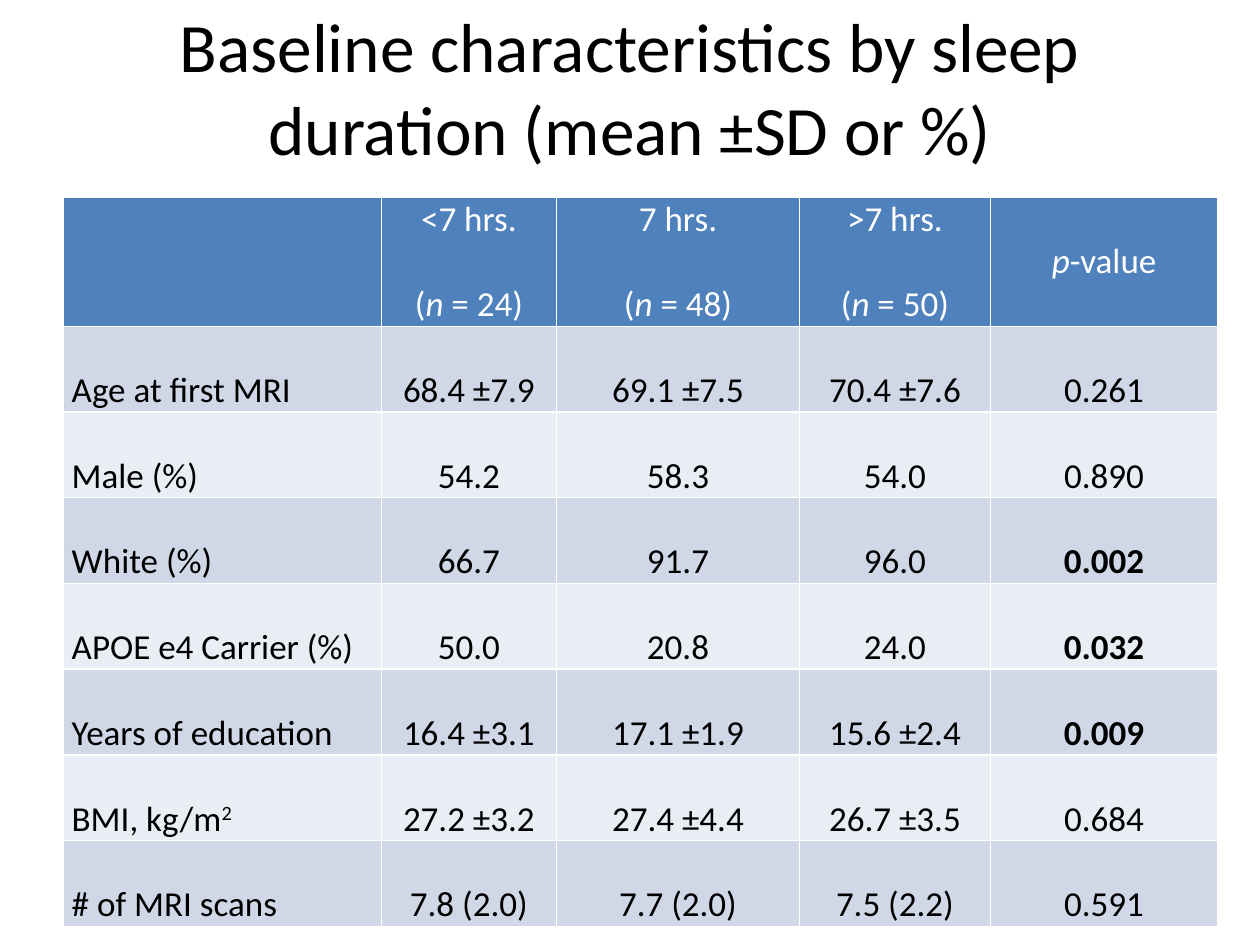
from pptx import Presentation
from pptx.dml.color import RGBColor
from pptx.enum.text import MSO_ANCHOR as Anchor, PP_ALIGN as Align
from pptx.util import Pt

FONT = "Calibri"
COLORS = {
    "header": "4F81BD",
    "odd_row": "D0D8E8",
    "even_row": "E9EDF4",
    "header_text": "FFFFFF",
    "text": "000000",
}
TITLE = "Baseline characteristics by sleep duration (mean ±SD or %)"
GROUPS = [("<7 hrs.", 24), ("7 hrs.", 48), (">7 hrs.", 50)]
MEASURES = [
    ("Age at first MRI", "68.4 ±7.9", "69.1 ±7.5", "70.4 ±7.6", "0.261"),
    ("Male (%)", "54.2", "58.3", "54.0", "0.890"),
    ("White (%)", "66.7", "91.7", "96.0", "0.002"),
    ("APOE e4 Carrier (%)", "50.0", "20.8", "24.0", "0.032"),
    ("Years of education", "16.4 ±3.1", "17.1 ±1.9", "15.6 ±2.4", "0.009"),
    ("BMI, kg/m^2", "27.2 ±3.2", "27.4 ±4.4", "26.7 ±3.5", "0.684"),
    ("# of MRI scans", "7.8 (2.0)", "7.7 (2.0)", "7.5 (2.2)", "0.591"),
]
SIGNIFICANCE = 0.05
COLUMN_WIDTHS = [182, 100, 139, 109, 130]
HEADER_HEIGHT, ROW_HEIGHT = 73.5, 49


def rgb(name):
    return RGBColor.from_string(COLORS[name])


def style(paragraph, size, color, align=Align.CENTER, spacing=None, bold=False):
    paragraph.alignment = align
    paragraph.line_spacing = spacing
    font = paragraph.font
    font.name, font.size, font.bold = FONT, Pt(size), bold
    font.color.rgb = rgb(color)


def add_runs(paragraph, text, italic=""):
    """Add text, with one letter in italics and what follows ^ raised."""
    before, letter, after = text.partition(italic) if italic else (text, "", "")
    base, _, raised = before.partition("^")
    for part in (base, letter, after, raised):
        if part:
            run = paragraph.add_run()
            run.text = part
            if part == letter:
                run.font.italic = True
            if part == raised:
                run._r.get_or_add_rPr().set("baseline", "30000")


def prepare_cell(cell, fill):
    cell.fill.solid()
    cell.fill.fore_color.rgb = rgb(fill)
    cell.margin_left = cell.margin_right = Pt(5)
    cell.margin_top = cell.margin_bottom = 0
    return cell.text_frame


def add_title(slide, left, top, width, height):
    frame = slide.shapes.add_textbox(Pt(left), Pt(top), Pt(width), Pt(height)).text_frame
    frame.word_wrap = True
    frame.vertical_anchor = Anchor.MIDDLE
    heading = frame.paragraphs[0]
    heading.text = TITLE
    style(heading, 39.6, "text")


def fill_header(table):
    frames = [prepare_cell(cell, "header") for cell in table.rows[0].cells]
    style(frames[0].paragraphs[0], 20, "header_text")
    for frame, (duration, count) in zip(frames[1:-1], GROUPS):
        label, size = frame.paragraphs[0], frame.add_paragraph()
        add_runs(label, duration)
        style(label, 20, "header_text")
        add_runs(size, f"(n = {count})", italic="n")
        style(size, 20, "header_text", spacing=2.0)
    p_value = frames[-1].paragraphs[0]
    add_runs(p_value, "p-value", italic="p")
    style(p_value, 20, "header_text", spacing=2.0)


def add_characteristics(slide, left, top, width, height):
    table = slide.shapes.add_table(
        len(MEASURES) + 1, len(COLUMN_WIDTHS), Pt(left), Pt(top), Pt(width), Pt(height)
    ).table
    for column, column_width in zip(table.columns, COLUMN_WIDTHS):
        column.width = Pt(column_width)
    for index, row in enumerate(table.rows):
        row.height = Pt(ROW_HEIGHT if index else HEADER_HEIGHT)
    fill_header(table)
    for r, measure in enumerate(MEASURES, start=1):
        for c, text in enumerate(measure):
            frame = prepare_cell(table.cell(r, c), "odd_row" if r % 2 else "even_row")
            value = frame.paragraphs[0]
            add_runs(value, text)
            significant = c == len(measure) - 1 and float(text) < SIGNIFICANCE
            style(value, 20, "text", Align.CENTER if c else Align.LEFT, 2.0, significant)


def main():
    deck = Presentation()
    deck.slide_width, deck.slide_height = Pt(720), Pt(540)
    slide = deck.slides.add_slide(deck.slide_layouts[6])
    add_title(slide, 36, 4.5, 648, 90)
    table_height = HEADER_HEIGHT + ROW_HEIGHT * len(MEASURES)
    add_characteristics(slide, 36, 113, sum(COLUMN_WIDTHS), table_height)
    deck.save("out.pptx")


if __name__ == "__main__":
    main()
